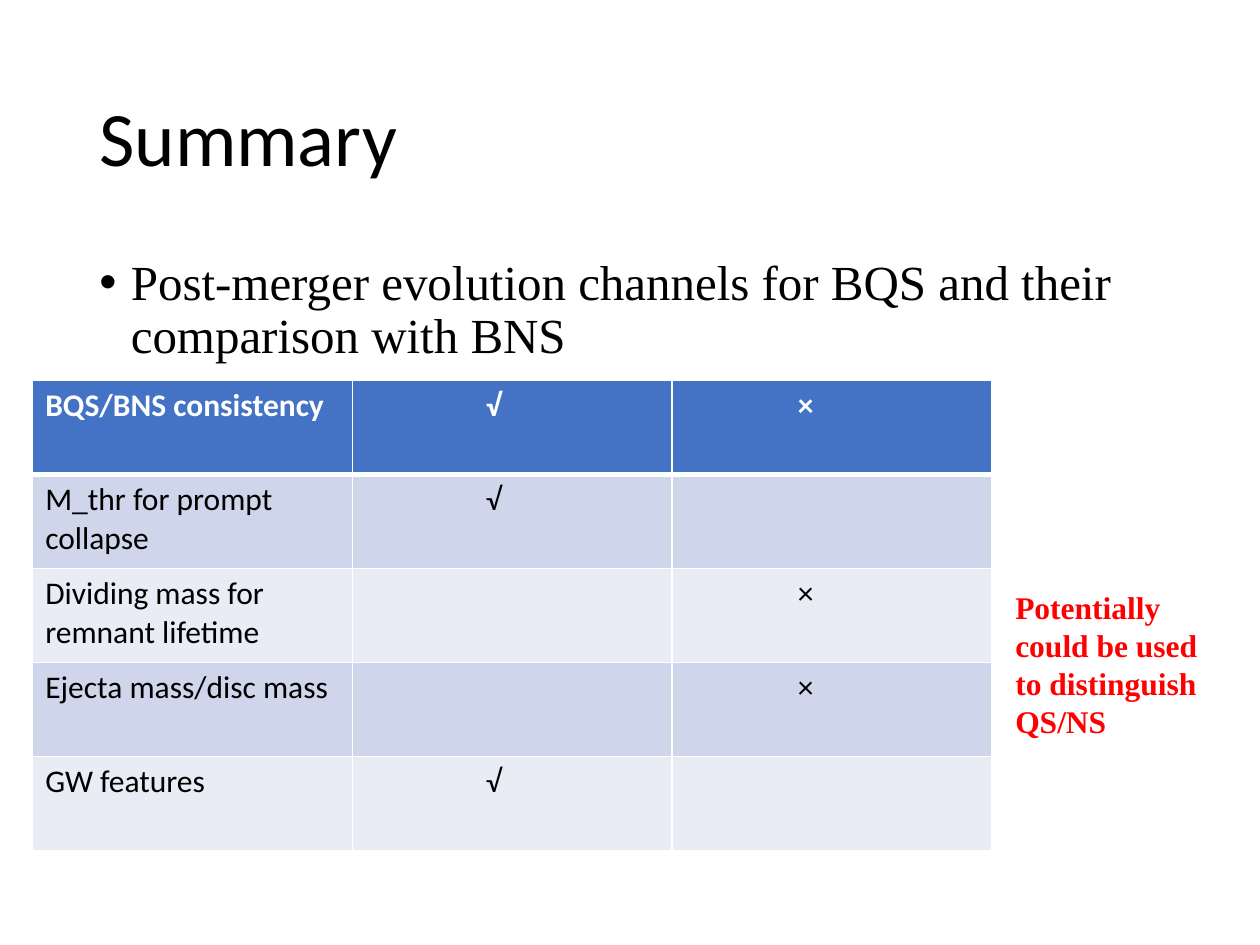
from lxml.etree import SubElement
from pptx import Presentation
from pptx.dml.color import RGBColor
from pptx.enum.text import MSO_ANCHOR
from pptx.oxml.ns import qn
from pptx.util import Emu, Inches, Pt

BLACK = RGBColor(0x00, 0x00, 0x00)
WHITE = RGBColor(0xFF, 0xFF, 0xFF)
RED = RGBColor(0xFF, 0x00, 0x00)
HEADER_BLUE = RGBColor(0x44, 0x72, 0xC4)
BAND_DARK = RGBColor(0xCF, 0xD5, 0xEA)
BAND_LIGHT = RGBColor(0xE9, 0xEB, 0xF5)

SANS, SERIF = "Calibri", "Times New Roman"
UNIT = Inches(0.1)  # the grid has 100 columns and 75 rows
CHECK, CROSS = "√", "×"
MARK_INDENT = {CHECK: 9.6, CROSS: 9}  # in grid columns

COMPARISON = [
    ("BQS/BNS consistency", CHECK, CROSS),
    ("M_thr for prompt collapse", CHECK, ""),
    ("Dividing mass for remnant lifetime", "", CROSS),
    ("Ejecta mass/disc mass", "", CROSS),
    ("GW features", CHECK, ""),
]


def grid(units):
    return Emu(round(units * UNIT))


def write(frame, text, *, font=SANS, size=18, color=BLACK, bold=False,
          line=None, indent=0, bullet=None):
    """Fill the first paragraph of a text frame."""
    paragraph = frame.paragraphs[0]
    properties = paragraph._p.get_or_add_pPr()
    if indent:
        properties.set("marL", str(grid(indent)))
    if bullet:
        properties.set("indent", str(-grid(indent)))
        SubElement(properties, qn("a:buFont"), typeface="Arial")
        SubElement(properties, qn("a:buChar"), char=bullet)
    if line:
        paragraph.line_spacing = line
    run = paragraph.add_run()
    run.text = text
    run.font.name, run.font.size = font, Pt(size)
    run.font.color.rgb, run.font.bold = color, bold


class SummarySlide:
    """Holds the current slide and the style of its parts."""

    def __init__(self, deck):
        self.slide = deck.slides.add_slide(deck.slide_layouts[6])

    def text(self, box, content, anchor=MSO_ANCHOR.TOP, **style):
        frame = self.slide.shapes.add_textbox(*map(grid, box)).text_frame
        frame.word_wrap = True
        frame.vertical_anchor = anchor
        write(frame, content, **style)

    def border(self, cell, side, width):
        edge = SubElement(cell._tc.get_or_add_tcPr(), qn(f"a:ln{side}"), w=str(Pt(width)))
        fill = SubElement(edge, qn("a:solidFill"))
        SubElement(fill, qn("a:srgbClr"), val=str(WHITE))

    def table(self, box, rows):
        table = self.slide.shapes.add_table(
            len(rows), len(rows[0]), *map(grid, box)).table
        for r, values in enumerate(rows):
            header = r == 0
            band = HEADER_BLUE if header else (BAND_DARK if r % 2 else BAND_LIGHT)
            # The rule between header and body is thicker
            widths = {"L": 1, "R": 1, "T": 3 if r == 1 else 1, "B": 3 if header else 1}
            for c, value in enumerate(values):
                cell = table.cell(r, c)
                for side, width in widths.items():
                    self.border(cell, side, width)
                cell.fill.solid()
                cell.fill.fore_color.rgb = band
                if value:
                    write(cell.text_frame, value, bold=header,
                          color=WHITE if header else BLACK,
                          indent=MARK_INDENT.get(value, 0))


def main():
    deck = Presentation()
    deck.slide_width, deck.slide_height = grid(100), grid(75)
    summary = SummarySlide(deck)

    # Title and topic
    summary.text((6.9, 4, 86.2, 14.5), "Summary", MSO_ANCHOR.MIDDLE, size=44, line=0.9)
    summary.text((6.9, 20, 86.2, 47.6),
                 "Post-merger evolution channels for BQS and their comparison with BNS",
                 font=SERIF, size=28, line=0.9, indent=2.5, bullet="•")

    # Comparison table and its remark
    summary.table((2.6, 30.2, 76.1, 37.3), COMPARISON)
    summary.text((79.6, 46.2, 19, 13.1),
                 "Potentially could be used to distinguish QS/NS",
                 font=SERIF, color=RED, bold=True)

    deck.save("out.pptx")


if __name__ == "__main__":
    main()
